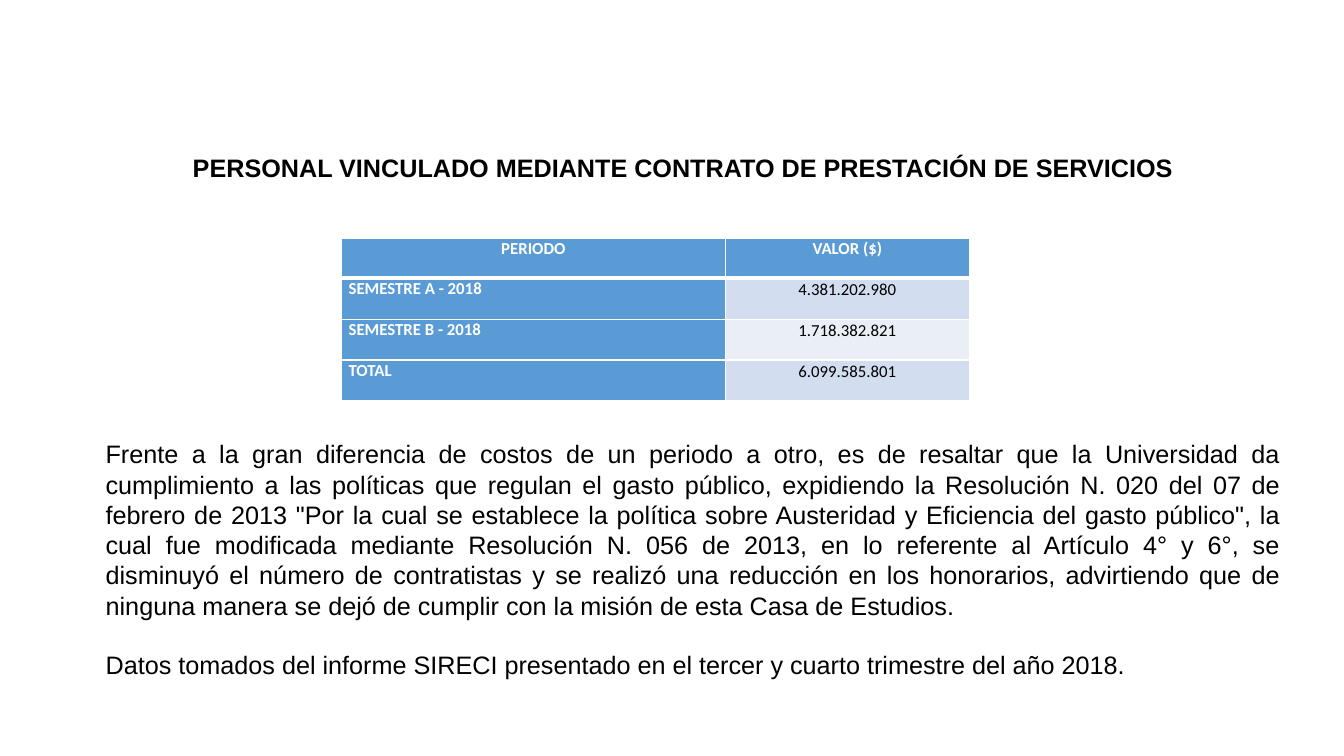
from lxml.etree import SubElement
from pptx import Presentation
from pptx.dml.color import RGBColor
from pptx.enum.text import MSO_ANCHOR, MSO_AUTO_SIZE, PP_ALIGN
from pptx.oxml.ns import qn
from pptx.util import Emu, Pt

THEME = {
    "text_font": "Arial",
    "table_font": "Calibri",
    "text_size": Pt(18),
    "table_size": Pt(12),
    "black": RGBColor.from_string("000000"),
    "white": RGBColor.from_string("FFFFFF"),
    "accent": RGBColor.from_string("5B9BD5"),
    "bands": [RGBColor.from_string("D2DEEF"), RGBColor.from_string("EAEFF7")],
}


def px(length):
    return Emu(length * 9525)


def set_values(target, values):
    for name, value in values.items():
        setattr(target, name, value)


presentation = Presentation()
set_values(presentation, {"slide_width": px(1280), "slide_height": px(720)})
slide = presentation.slides.add_slide(presentation.slide_layouts[1])

title_paragraphs = ["PERSONAL VINCULADO MEDIANTE CONTRATO DE PRESTACIÓN DE SERVICIOS"]
body_paragraphs = [
    "Frente a la gran diferencia de costos de un periodo a otro, es de resaltar que la "
    "Universidad da cumplimiento a las políticas que regulan el gasto público, expidiendo "
    "la Resolución N. 020 del 07 de febrero de 2013 \"Por la cual se establece la política "
    "sobre Austeridad y Eficiencia del gasto público\", la cual fue modificada mediante "
    "Resolución N. 056 de 2013, en lo referente al Artículo 4° y 6°, se disminuyó el número "
    "de contratistas y se realizó una reducción en los honorarios, advirtiendo que de "
    "ninguna manera se dejó de cumplir con la misión de esta Casa de Estudios.",
    "Datos tomados del informe SIRECI presentado en el tercer y cuarto trimestre del año 2018.",
]
text_blocks = [
    (slide.shapes.title, (71, 140, 1159, 38), title_paragraphs, PP_ALIGN.CENTER, True),
    (slide.placeholders[1], (91, 413, 1138, 242), body_paragraphs, PP_ALIGN.JUSTIFY, False),
]
for shape, box, texts, alignment, bold in text_blocks:
    set_values(shape, dict(zip(("left", "top", "width", "height"), map(px, box))))
    frame = shape.text_frame
    set_values(frame, {
        "word_wrap": True,
        "auto_size": MSO_AUTO_SIZE.NONE,
        "vertical_anchor": MSO_ANCHOR.TOP,
    })
    frame.text = "\n".join(texts)
    for index, paragraph in enumerate(frame.paragraphs):
        properties = paragraph._p.get_or_add_pPr()
        properties.set("marL", "0")
        properties.set("indent", "0")
        SubElement(properties, qn("a:buNone"))
        set_values(paragraph, {
            "alignment": alignment,
            "line_spacing": 1.0,
            "space_before": Pt(21 if index else 0),
            "space_after": Pt(0),
        })
        set_values(paragraph.font, {
            "name": THEME["text_font"],
            "size": THEME["text_size"],
            "bold": bold,
        })
        paragraph.font.color.rgb = THEME["black"]

rows = [
    ("PERIODO", "VALOR ($)"),
    ("SEMESTRE A - 2018", "4.381.202.980"),
    ("SEMESTRE B - 2018", "1.718.382.821"),
    ("TOTAL", "6.099.585.801"),
]
column_widths = [366, 232]
row_heights = [38, 39, 39, 39]
table = slide.shapes.add_table(
    len(rows), len(column_widths), px(325), px(227),
    px(sum(column_widths)), px(sum(row_heights)),
).table
for column, width in zip(table.columns, column_widths):
    column.width = px(width)
for row, height in zip(table.rows, row_heights):
    row.height = px(height)

for row_index, row in enumerate(rows):
    for column_index, text in enumerate(row):
        cell = table.cell(row_index, column_index)
        is_header = row_index == 0
        is_value = not is_header and column_index == 1
        set_values(cell, {
            "margin_left": px(7),
            "margin_right": px(7),
            "margin_top": 0,
            "margin_bottom": 0,
            "text": text,
        })
        thick_side = {0: "lnB", 1: "lnT"}.get(row_index)
        for side in ("lnL", "lnR", "lnT", "lnB"):
            line_width = Pt(3 if side == thick_side else 1)
            border = SubElement(cell._tc.get_or_add_tcPr(), qn(f"a:{side}"), w=str(line_width))
            border_fill = SubElement(border, qn("a:solidFill"))
            SubElement(border_fill, qn("a:srgbClr"), val=str(THEME["white"]))
        cell.fill.solid()
        band = THEME["bands"][(row_index - 1) % 2]
        cell.fill.fore_color.rgb = band if is_value else THEME["accent"]
        paragraph = cell.text_frame.paragraphs[0]
        set_values(paragraph, {
            "alignment": PP_ALIGN.CENTER if is_header or is_value else PP_ALIGN.LEFT,
            "line_spacing": 1.07 if is_value else 1.0,
        })
        set_values(paragraph.font, {
            "name": THEME["table_font"],
            "size": THEME["table_size"],
            "bold": not is_value,
        })
        paragraph.font.color.rgb = THEME["black"] if is_value else THEME["white"]

presentation.save("out.pptx")
